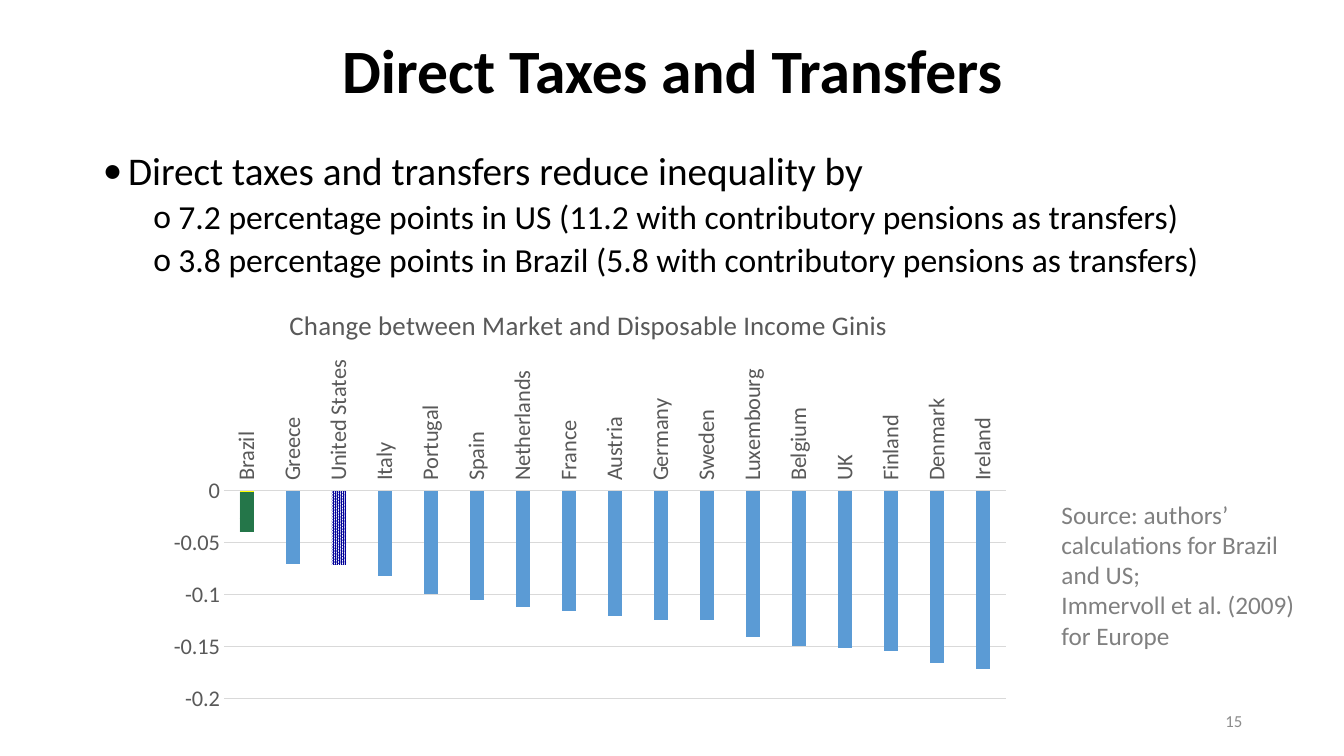
from lxml import etree
from pptx import Presentation
from pptx import util as u
from pptx.chart import data as cd
from pptx.dml import color as col
from pptx.enum import chart as ch
from pptx.enum import dml, text
from pptx.oxml import parse_xml
from pptx.oxml.ns import nsdecls, qn

HUES = {"ink": "000000", "axis": "595959", "grid": "D9D9D9", "bar": "5B9BD5",
        "green": "247649", "gold": "FFFF00", "navy": "000099",
        "white": "FFFFFF", "note": "808080", "page": "8C8C8C"}
GINIS = {"Brazil": -0.039, "Greece": -0.07, "United States": -0.071,
         "Italy": -0.082, "Portugal": -0.099, "Spain": -0.105,
         "Netherlands": -0.112, "France": -0.115, "Austria": -0.12,
         "Germany": -0.124, "Sweden": -0.124, "Luxembourg": -0.14,
         "Belgium": -0.149, "UK": -0.151, "Finland": -0.154,
         "Denmark": -0.165, "Ireland": -0.171}
MARKS = {"Brazil": (dml.MSO_PATTERN.DARK_HORIZONTAL, "green", "gold"),
         "United States": (dml.MSO_PATTERN.PERCENT_90, "navy", "white")}
POINTS = [("Direct taxes and transfers reduce inequality by", 0),
          ("7.2 percentage points in US (11.2 with contributory pensions as transfers)", 1),
          ("3.8 percentage points in Brazil (5.8 with contributory pensions as transfers)", 1)]
LEVELS = [dict(size=28, mark="•", left=0.25, gap=10),
          dict(size=24, mark="o", left=0.75, gap=5)]
NOTE = ["Source: authors’ calculations for Brazil and US;",
        "Immervoll et al. (2009) for Europe"]


def apply(obj, **vals):
    for key, val in vals.items():
        setattr(obj, key, val)


def hue(key):
    return col.RGBColor.from_string(HUES[key])


def style(font, size, tint, bold=False):
    apply(font, name="Calibri", size=u.Pt(size), bold=bold)
    font.color.rgb = hue(tint)


def place(shape, *box):
    apply(shape, **dict(zip(("left", "top", "width", "height"), map(u.Inches, box))))


def write(frame, lines, size, tint, align, bold=False, **form):
    apply(frame, word_wrap=True, **form)
    for i, line in enumerate(lines):
        para = frame.paragraphs[0] if i == 0 else frame.add_paragraph()
        para.alignment = align
        run = para.add_run()
        run.text = line
        style(run.font, size, tint, bold)


def add_title(slide):
    title = slide.shapes.title
    place(title, 0.92, 0, 11.5, 1.45)
    write(title.text_frame, ["Direct Taxes and Transfers"], 44, "ink",
          text.PP_ALIGN.CENTER, True, vertical_anchor=text.MSO_ANCHOR.MIDDLE)
    title.text_frame.paragraphs[0].line_spacing = 0.9


def add_list(slide):
    body = slide.placeholders[1]
    place(body, 0.92, 1.45, 11.5, 4.76)
    write(body.text_frame, [line for line, _ in POINTS], 28, "ink", text.PP_ALIGN.LEFT)
    for para, (_, depth) in zip(body.text_frame.paragraphs, POINTS):
        form = LEVELS[depth]
        apply(para, level=depth, line_spacing=0.9, space_before=u.Pt(form["gap"]))
        para.runs[0].font.size = u.Pt(form["size"])
        props = para._p.get_or_add_pPr()
        props.set("marL", str(u.Inches(form["left"])))
        props.set("indent", str(-u.Inches(0.25)))
        etree.SubElement(props, qn("a:buFont")).set("typeface", "Calibri")
        etree.SubElement(props, qn("a:buChar")).set("char", form["mark"])


def add_text(slide, box, *args, **form):
    shape = slide.shapes.add_textbox(*map(u.Inches, box))
    write(shape.text_frame, *args, **form)


def rule(line):
    line.width = u.Pt(0.75)
    line.color.rgb = hue("grid")


def set_axes(chart):
    cat, val = chart.category_axis, chart.value_axis
    for axis in (cat, val):
        apply(axis, major_tick_mark=ch.XL_TICK_MARK.NONE,
              minor_tick_mark=ch.XL_TICK_MARK.NONE)
        style(axis.tick_labels.font, 16, "axis")
    cat.tick_label_position = ch.XL_TICK_LABEL_POSITION.HIGH
    rule(cat.format.line)
    turn = chart.element.xpath(".//c:catAx/c:txPr/a:bodyPr")[0]
    turn.set("rot", "-5400000")
    turn.set("vert", "horz")
    apply(val, minimum_scale=-0.2, maximum_scale=0, major_unit=0.05,
          has_major_gridlines=True)
    val.format.line.fill.background()
    rule(val.major_gridlines.format.line)
    apply(val.tick_labels, number_format="General", number_format_is_linked=False)


def set_plot(chart):
    for old in chart.element.xpath(".//c:plotArea/c:layout"):
        old.getparent().remove(old)
    sides = "".join(f'<c:{key} val="{val}"/>' for key, val in
                    dict(layoutTarget="inner", xMode="edge", yMode="edge",
                         x=0.08, y=0.47, w=0.9, h=0.48).items())
    area = chart.element.xpath(".//c:plotArea")[0]
    area.insert(0, parse_xml(f'<c:layout {nsdecls("c")}><c:manualLayout>{sides}'
                             '</c:manualLayout></c:layout>'))


def add_bars(slide):
    data = cd.CategoryChartData()
    data.categories = list(GINIS)
    data.add_series("Series 1", list(GINIS.values()))
    box = map(u.Inches, (1.53, 2.85, 8.62, 4.3))
    chart = slide.shapes.add_chart(ch.XL_CHART_TYPE.COLUMN_CLUSTERED, *box, data).chart
    style(chart.font, 16, "ink")
    apply(chart, has_legend=False, has_title=True)
    write(chart.chart_title.text_frame,
          ["Change between Market and Disposable Income Ginis"],
          19.2, "axis", text.PP_ALIGN.CENTER)
    chart.chart_title.include_in_layout = False
    plot = chart.plots[0]
    apply(plot, gap_width=219, overlap=-27, vary_by_categories=False)
    bars = plot.series[0]
    bars.invert_if_negative = False
    bars.format.fill.solid()
    bars.format.fill.fore_color.rgb = hue("bar")
    for land, (kind, fore, back) in MARKS.items():
        fill = bars.points[list(GINIS).index(land)].format.fill
        fill.patterned()
        fill.pattern = kind
        fill.fore_color.rgb = hue(fore)
        fill.back_color.rgb = hue(back)
    set_axes(chart)
    set_plot(chart)


def main():
    deck = Presentation()
    apply(deck, slide_width=u.Inches(13.33), slide_height=u.Inches(7.5))
    slide = deck.slides.add_slide(deck.slide_layouts[1])
    add_title(slide)
    add_list(slide)
    add_bars(slide)
    add_text(slide, (10.43, 4.9, 2.56, 1.62), NOTE, 18, "note", text.PP_ALIGN.LEFT,
             auto_size=text.MSO_AUTO_SIZE.SHAPE_TO_FIT_TEXT)
    add_text(slide, (9.42, 6.95, 3, 0.4), ["15"], 12, "page", text.PP_ALIGN.RIGHT,
             vertical_anchor=text.MSO_ANCHOR.MIDDLE)
    deck.save("out.pptx")


if __name__ == "__main__":
    main()
